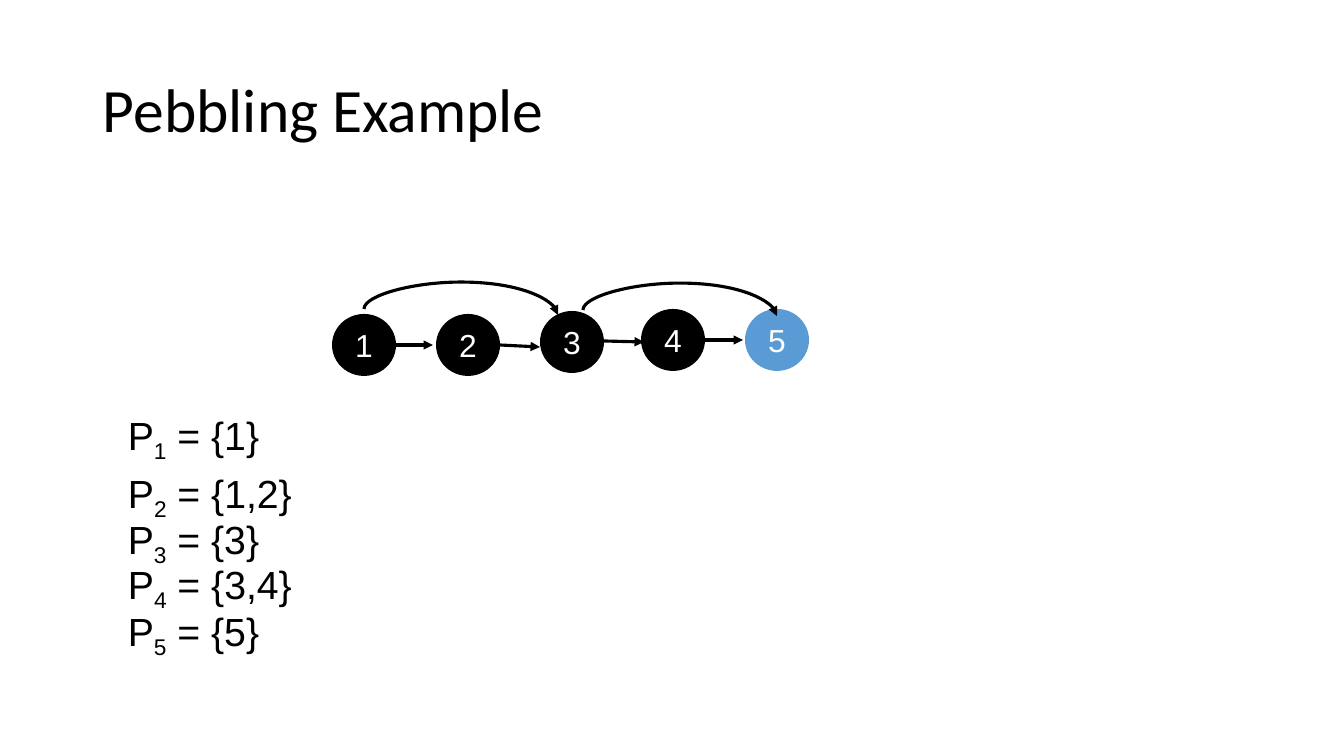
"""Build the Pebbling Example slide: a five-node graph and its pebble sets."""
from lxml import etree
from pptx import Presentation
from pptx.dml.color import RGBColor
from pptx.enum.shapes import MSO_CONNECTOR, MSO_SHAPE
from pptx.enum.text import MSO_ANCHOR, MSO_AUTO_SIZE, PP_ALIGN
from pptx.oxml.ns import qn
from pptx.util import Pt

STRAIGHT, CURVE = MSO_CONNECTOR.STRAIGHT, MSO_CONNECTOR.CURVE
ELLIPSE = MSO_SHAPE.OVAL
MIDDLE, CENTER = MSO_ANCHOR.MIDDLE, PP_ALIGN.CENTER
FIT_SHAPE = MSO_AUTO_SIZE.SHAPE_TO_FIT_TEXT

COLORS = {"black": "000000", "white": "FFFFFF", "blue": "5B9BD5"}
PX = 914400 / 100.8


def add_span(para, text, size, font="Arial", color="black"):
    span = para.add_run()
    span.text = text
    span.font.size = Pt(size)
    span.font.name = font
    span.font.color.rgb = RGBColor.from_string(COLORS[color])
    return span


def add_arrow(kind, *ends):
    arrow = page.shapes.add_connector(kind, *(round(end * PX) for end in ends))
    arrow.line.color.rgb = RGBColor.from_string(COLORS["black"])
    arrow.line.width = Pt(2.25)
    etree.SubElement(arrow.line._get_or_add_ln(), qn("a:tailEnd"), type="triangle")
    etree.SubElement(arrow._element.spPr, qn("a:effectLst"))
    return arrow


deck = Presentation()
deck.slide_width, deck.slide_height = round(1344 * PX), round(756 * PX)
page = deck.slides.add_slide(deck.slide_layouts[6])

title = page.shapes.add_textbox(*(round(v * PX) for v in (93, 40, 1159, 146)))
title.text_frame.word_wrap = True
title.text_frame.vertical_anchor = MIDDLE
para = title.text_frame.paragraphs[0]
para.line_spacing = 0.9
add_span(para, "Pebbling Example", 44, "Calibri")

pebble_sets = [("{1}", 406), ("{1,2}", 464), ("{3}", 510), ("{3,4}", 555), ("{5}", 602)]
for number, (members, top) in enumerate(pebble_sets, 1):
    width = 188 if "," in members else 155
    box = page.shapes.add_textbox(*(round(v * PX) for v in (118, top, width, 57)))
    box.text_frame.word_wrap = False
    box.text_frame.auto_size = FIT_SHAPE
    para = box.text_frame.paragraphs[0]
    add_span(para, "P", 28)
    subscript = add_span(para, str(number), 28)
    subscript.font._element.set("baseline", "-25000")
    add_span(para, f" = {members}", 28)

nodes = [
    (332, 314, "black"),
    (436, 314, "black"),
    (540, 311, "black"),
    (641, 309, "black"),
    (745, 309, "blue"),
]
for number, (left, top, color) in enumerate(nodes, 1):
    node = page.shapes.add_shape(ELLIPSE, *(round(v * PX) for v in (left, top, 64, 62)))
    node.shadow.inherit = False
    node.fill.solid()
    node.fill.fore_color.rgb = RGBColor.from_string(COLORS[color])
    node.line.fill.background()
    node.text_frame.vertical_anchor = MIDDLE
    para = node.text_frame.paragraphs[0]
    para.alignment = CENTER
    add_span(para, str(number), 22.7, color="white")

for left, top, drop in [(393, 345, 0), (500, 345, 2), (604, 341, 1), (703, 340, 0)]:
    add_arrow(STRAIGHT, left, top, left + 40, top + drop)

span_width, drop, rise = 194, 6, 27
for left, top in [(364, 309), (583, 310)]:
    middle_x, middle_y = left + span_width / 2, top + drop / 2
    arc = add_arrow(
        CURVE,
        middle_x + drop / 2,
        middle_y - span_width / 2,
        middle_x - drop / 2,
        middle_y + span_width / 2,
    )
    properties = arc._element.spPr
    properties.find(qn("a:xfrm")).set("rot", str(270 * 60000))
    adjustments = properties.find(qn("a:prstGeom")).find(qn("a:avLst"))
    bend = round(-rise / drop * 100000)
    etree.SubElement(adjustments, qn("a:gd"), name="adj1", fmla=f"val {bend}")

deck.save("out.pptx")
